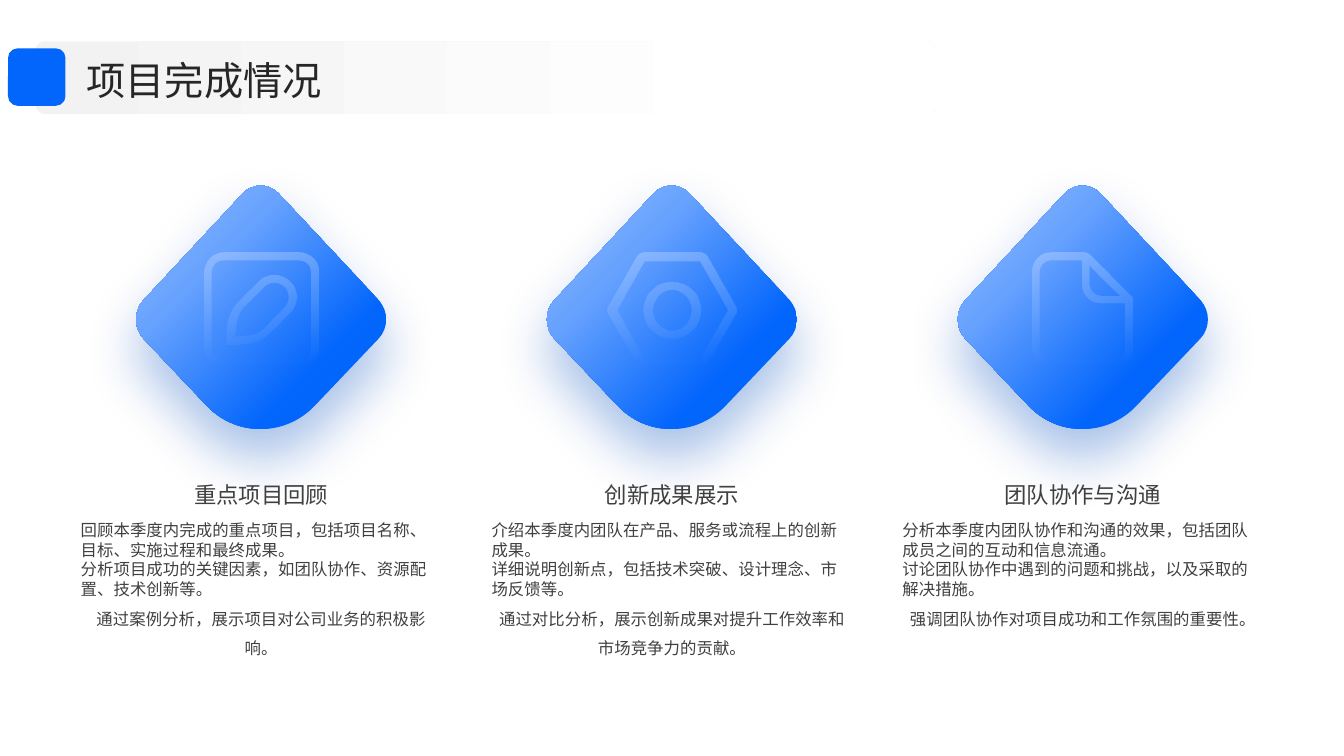
from dataclasses import dataclass
from math import hypot

from lxml.etree import SubElement
from pptx import Presentation
from pptx.dml.color import RGBColor
from pptx.enum.shapes import MSO_SHAPE
from pptx.enum.text import MSO_ANCHOR, PP_ALIGN
from pptx.oxml import parse_xml
from pptx.oxml.ns import nsdecls, qn
from pptx.util import Inches, Pt


@dataclass(frozen=True)
class Theme:
    font: str = "Noto Sans CJK SC"
    accent: str = "0265FC"
    shadow: str = "014CBD"
    title_color: str = "262626"
    text_color: str = "404040"
    title_size: float = 28
    heading_size: float = 16
    body_size: float = 11.7
    diamond_stops: tuple = ((0, "99C1FE", 100), (31, "67A2FE", 100), (73, "0265FC", 100))
    icon_stops: tuple = ((0, "FFFFFF", 25), (100, "FFFFFF", 0))
    band_stops: tuple = ((0, "F2F2F2", 100), (80, "FFFFFF", 100))


THEME = Theme()
CORNER_PULL = 0.55
COLUMN_LEFT, COLUMN_RIGHT, COLUMN_WIDTH = 0.8, 8.95, 3.58

DIAMOND = [[(1.26, -0.09, 0.26), (2.61, 1.35, 0.26), (1.26, 2.77, 0.78), (-0.08, 1.35, 0.26)]]


def box(left, top, right, bottom, radius):
    return [(left, top, radius), (right, top, radius), (right, bottom, radius), (left, bottom, radius)]


PENCIL_ICON = [
    box(0, 0, 1.13, 1.13, 0.19),
    box(0.07, 0.08, 1.05, 1.06, 0.11),
    [(0.69, 0.13, 0.22), (1, 0.44, 0.22), (0.54, 0.9, 0.13), (0.22, 0.91, 0), (0.23, 0.59, 0.13)],
    [(0.69, 0.24, 0.14), (0.89, 0.44, 0.14), (0.54, 0.8, 0.08), (0.3, 0.83, 0), (0.33, 0.6, 0.08)],
]
NUT_ICON = [
    [(-0.01, 0.57, 0.04), (0.32, 0, 0.04), (0.97, 0, 0.04), (1.3, 0.57, 0.04), (0.97, 1.13, 0.04), (0.32, 1.13, 0.04)],
    [(0.1, 0.57, 0), (0.37, 0.09, 0), (0.92, 0.09, 0), (1.2, 0.57, 0), (0.92, 1.05, 0), (0.37, 1.05, 0)],
    box(0.36, 0.29, 0.93, 0.85, 0.28),
    box(0.45, 0.37, 0.84, 0.77, 0.2),
]
DOCUMENT_ICON = [
    [(0, 0, 0.18), (0.54, 0, 0.02), (0.99, 0.45, 0.02), (0.99, 1.13, 0.18), (0, 1.13, 0.18)],
    [(0.07, 0.08, 0.11), (0.49, 0.08, 0), (0.49, 0.5, 0.18), (0.91, 0.5, 0), (0.91, 1.06, 0.1), (0.07, 1.06, 0.11)],
    [(0.56, 0.13, 0), (0.86, 0.43, 0), (0.56, 0.43, 0.11)],
]

TOPICS = [
    ("重点项目回顾", PENCIL_ICON, 1.13, [
        "回顾本季度内完成的重点项目，包括项目名称、目标、实施过程和最终成果。",
        "分析项目成功的关键因素，如团队协作、资源配置、技术创新等。",
        "通过案例分析，展示项目对公司业务的积极影响。"]),
    ("创新成果展示", NUT_ICON, 1.29, [
        "介绍本季度内团队在产品、服务或流程上的创新成果。",
        "详细说明创新点，包括技术突破、设计理念、市场反馈等。",
        "通过对比分析，展示创新成果对提升工作效率和市场竞争力的贡献。"]),
    ("团队协作与沟通", DOCUMENT_ICON, 0.99, [
        "分析本季度内团队协作和沟通的效果，包括团队成员之间的互动和信息流通。",
        "讨论团队协作中遇到的问题和挑战，以及采取的解决措施。",
        "强调团队协作对项目成功和工作氛围的重要性。"]),
]


def toward(start, end, distance):
    share = distance / hypot(end[0] - start[0], end[1] - start[1])
    return tuple(a + (b - a) * share for a, b in zip(start[:2], end[:2]))


def round_corners(corners):
    points = []
    for index, corner in enumerate(corners):
        radius = corner[2]
        if not radius:
            points.append((corner[:2], False))
            continue
        before, after = corners[index - 1], corners[(index + 1) % len(corners)]
        pull = radius * (1 - CORNER_PULL)
        points += [(toward(corner, before, radius), False), (toward(corner, before, pull), True),
                   (toward(corner, after, pull), True), (toward(corner, after, radius), True)]
    return points


def bend_corners(shape, curved):
    path_element = shape._element.spPr.find(".//" + qn("a:path"))
    steps = [step for step in path_element if step.tag != qn("a:close")]
    curve = None
    for step, is_curved in zip(steps, curved):
        if not is_curved:
            curve = None
        elif curve is None:
            curve = step
            curve.tag = qn("a:cubicBezTo")
        else:
            curve.append(step[0])
            path_element.remove(step)


def add_outline(slide, left, top, contours):
    builder = None
    curved = []
    for contour in contours:
        rounded = round_corners(contour)
        points = [(Inches(x), Inches(y)) for (x, y), _ in rounded]
        curved += [is_curved for _, is_curved in rounded]
        if builder is None:
            builder = slide.shapes.build_freeform(*points[0], scale=1.0)
        else:
            builder.move_to(*points[0])
        builder.add_line_segments(points[1:], close=True)
    shape = builder.convert_to_shape(Inches(left), Inches(top))
    bend_corners(shape, curved)
    shape.line.fill.background()
    shape.shadow.inherit = False
    return shape


def add_rounded_box(slide, left, top, width, height, adjustment):
    shape = slide.shapes.add_shape(
        MSO_SHAPE.ROUNDED_RECTANGLE, Inches(left), Inches(top), Inches(width), Inches(height))
    shape.adjustments[0] = adjustment
    shape.line.fill.background()
    shape.shadow.inherit = False
    return shape


def set_gradient(shape, stops, direction):
    stop_xml = "".join(
        f'<a:gs pos="{position * 1000}"><a:srgbClr val="{color}">'
        f'<a:alpha val="{opacity * 1000}"/></a:srgbClr></a:gs>'
        for position, color, opacity in stops)
    gradient = parse_xml(
        f'<a:gradFill {nsdecls("a")} rotWithShape="1"><a:gsLst>{stop_xml}</a:gsLst>{direction}</a:gradFill>')
    shape.fill.gradient()
    properties = shape._element.spPr
    properties.replace(properties.find(qn("a:gradFill")), gradient)


def set_soft_shadow(shape):
    effects = shape._element.spPr.find(qn("a:effectLst"))
    shadow = SubElement(effects, qn("a:outerShdw"), blurRad=str(Pt(40)), dist=str(Pt(20)),
                        dir="5400000", algn="t", rotWithShape="0")
    color = SubElement(shadow, qn("a:srgbClr"), val=THEME.shadow)
    SubElement(color, qn("a:alpha"), val="35000")


def add_text(slide, left, top, width, height, lines, size, color, anchor):
    text_box = slide.shapes.add_textbox(Inches(left), Inches(top), Inches(width), Inches(height))
    frame = text_box.text_frame
    frame.word_wrap = True
    frame.vertical_anchor = anchor
    frame.margin_left = frame.margin_right = frame.margin_top = frame.margin_bottom = 0
    for index, (text, alignment, spacing) in enumerate(lines):
        paragraph = frame.paragraphs[0] if index == 0 else frame.add_paragraph()
        paragraph.alignment = alignment
        paragraph.line_spacing = spacing
        paragraph._p.get_or_add_pPr().set("hangingPunct", "0")
        run = paragraph.add_run()
        run.text = text
        run.font.name = THEME.font
        run.font.size = Pt(size)
        run.font.color.rgb = RGBColor.from_string(color)
        SubElement(run.font._element, qn("a:ea"), typeface=THEME.font)


def add_header(slide, left, top, title):
    band = add_rounded_box(slide, left + 0.27, top, 8.94, 0.72, 0.139)
    set_gradient(band, THEME.band_stops, '<a:lin ang="0" scaled="0"/>')
    add_text(slide, left + 0.78, top + 0.1, 11.67, 0.51, [(title, PP_ALIGN.LEFT, 1.1)],
             THEME.title_size, THEME.title_color, MSO_ANCHOR.MIDDLE)
    marker = add_rounded_box(slide, left, top + 0.07, 0.57, 0.57, 0.167)
    marker.fill.solid()
    marker.fill.fore_color.rgb = RGBColor.from_string(THEME.accent)


def add_topic(slide, left, top, width, heading, icon, icon_width, details):
    diamond = add_outline(slide, left + (width - 2.53) / 2, top, DIAMOND)
    set_gradient(diamond, THEME.diamond_stops,
                 '<a:path path="circle"><a:fillToRect r="100000" b="100000"/></a:path>')
    set_soft_shadow(diamond)
    symbol = add_outline(slide, left + (width - icon_width) / 2, top + 0.69, icon)
    set_gradient(symbol, THEME.icon_stops, '<a:lin ang="5400000" scaled="0"/>')
    add_text(slide, left, top + 2.5, width, 0.72, [(heading, PP_ALIGN.CENTER, 1.1)],
             THEME.heading_size, THEME.text_color, MSO_ANCHOR.BOTTOM)
    lines = [(text, PP_ALIGN.LEFT, 1.0) for text in details[:-1]]
    lines.append((details[-1], PP_ALIGN.CENTER, 1.5))
    add_text(slide, left, top + 3.34, width, 1.61, lines,
             THEME.body_size, THEME.text_color, MSO_ANCHOR.TOP)


def main():
    presentation = Presentation()
    presentation.slide_width, presentation.slide_height = Inches(13.33), Inches(7.5)
    slide = presentation.slides.add_slide(presentation.slide_layouts[6])
    pitch = (COLUMN_RIGHT - COLUMN_LEFT) / (len(TOPICS) - 1)
    for index, topic in enumerate(TOPICS):
        add_topic(slide, COLUMN_LEFT + index * pitch, 1.82, COLUMN_WIDTH, *topic)
    add_header(slide, 0.08, 0.41, "项目完成情况")
    presentation.save("out.pptx")


if __name__ == "__main__":
    main()
